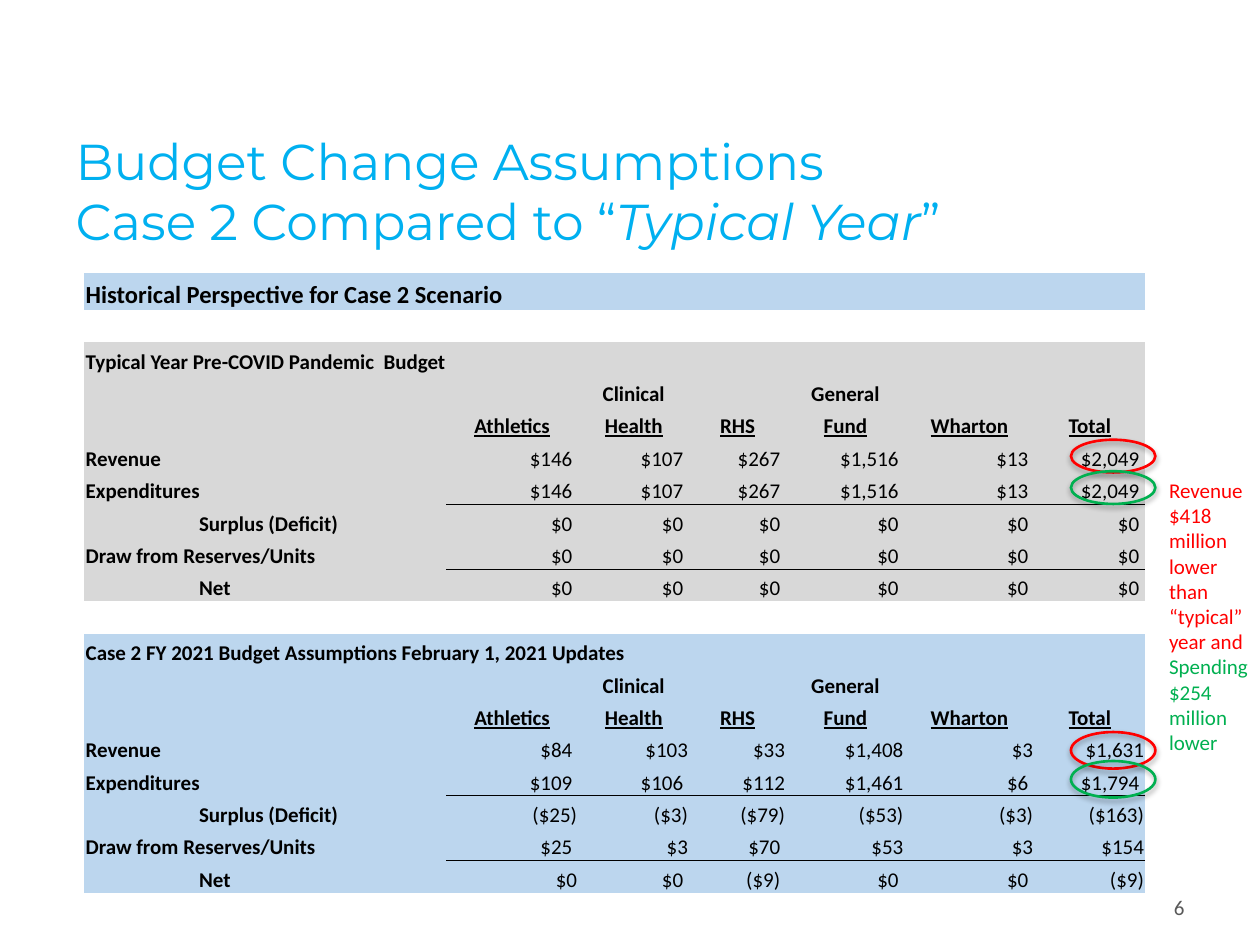
from lxml.etree import SubElement
from pptx import Presentation
from pptx.dml.color import RGBColor
from pptx.enum.shapes import MSO_SHAPE
from pptx.enum.text import MSO_ANCHOR as Anchor, MSO_AUTO_SIZE as AutoSize, PP_ALIGN as Align
from pptx.oxml import parse_xml
from pptx.oxml.ns import nsdecls, qn
from pptx.util import Inches, Pt

presentation = Presentation()
presentation.slide_width = Inches(10)
presentation.slide_height = Inches(7.5)
slide = presentation.slides.add_slide(presentation.slide_layouts[5])
unit = presentation.slide_width // 100
color = RGBColor.from_string
BLUE, GRAY, RED, GREEN, BLACK = "BCD6EE", "D8D8D8", "FF0000", "00B050", "000000"


def grid(*lengths):
    return [round(length * unit) for length in lengths]


def write(paragraph, text, size=12, font="Calibri", ink=BLACK, align=Align.LEFT,
          bold=False, italic=False, underline=False):
    paragraph.alignment = align
    run = paragraph.add_run()
    run.text = text
    run.font.size = Pt(size)
    run.font.name = font
    run.font.color.rgb = color(ink)
    run.font.bold = bold
    run.font.italic = italic
    run.font.underline = underline


title = slide.shapes.title
title.left, title.top, title.width, title.height = grid(5, 9.8, 90, 9.1)
title.text_frame.vertical_anchor = Anchor.TOP
title.text_frame.auto_size = AutoSize.NONE
title.text_frame.word_wrap = True
heading = title.text_frame.paragraphs[0]
title_style = {"size": 28.8, "font": "Montserrat", "ink": "00B0F0"}
write(heading, "Budget Change Assumptions", **title_style)
heading.add_line_break()
write(heading, "Case 2 Compared to “", **title_style)
write(heading, "Typical Year", italic=True, **title_style)
write(heading, "”", **title_style)

number = slide.shapes.add_textbox(*grid(71.7, 70, 23.3, 4)).text_frame
number.word_wrap = True
number.vertical_anchor = Anchor.MIDDLE
write(number.paragraphs[0], "6", ink="595959", align=Align.RIGHT)

column_widths = [9, 9.6, 10.1, 10.5, 8.8, 7.7, 9.4, 10.3, 8.8]
labels = [("Revenue", 0, 2), ("Expenditures", 0, 2), ("Surplus (Deficit)", 1, 2),
          ("Draw from Reserves/Units", 0, 3), ("Net", 1, 1)]
headers = ["Athletics", "Health", "RHS", "Fund", "Wharton", "Total"]
typical_amounts = [["$146 ", "$107 ", "$267 ", "$1,516 ", "$13 ", "$2,049 "]] * 2 + [["$0 "] * 6] * 3
case_amounts = [
    ["$84 ", "$103", "$33", "$1,408", "$3", "$1,631"],
    ["$109 ", "$106 ", "$112", "$1,461", "$6 ", "$1,794 "],
    ["($25)", "($3)", "($79)", "($53)", "($3)", "($163)"],
    ["$25 ", "$3", "$70 ", "$53", "$3", "$154"],
    ["$0", "$0 ", "($9) ", "$0 ", "$0 ", "($9)"],
]
blocks = [
    (2, 5, "Typical Year Pre-COVID Pandemic  Budget", typical_amounts),
    (11, 7, "Case 2 FY 2021 Budget Assumptions February 1, 2021 Updates", case_amounts),
]

frame = slide.shapes.add_table(19, 9, *grid(6.7, 21.7, 84.2, 49.2))
table = frame.table
table.first_row = table.horz_banding = False
table._tbl.tblPr.find(qn("a:tableStyleId")).text = "{2D5ABB26-0587-4C30-8999-92F81FD0307C}"
for column, width in zip(table.columns, grid(*column_widths)):
    column.width = width
first_height, body_height = grid(2.9, (49.2 - 2.9) / 18)
for index, row in enumerate(table.rows):
    row.height = body_height if index else first_height
    fill = BLUE if index == 0 or index >= 11 else GRAY
    for cell in row.cells:
        cell.margin_left = cell.margin_right = cell.margin_top = Inches(0.01)
        cell.margin_bottom = 0
        cell.vertical_anchor = Anchor.BOTTOM
        if index in (1, 10):
            cell.fill.background()
        else:
            cell.fill.solid()
            cell.fill.fore_color.rgb = color(fill)

table.cell(0, 0).merge(table.cell(0, 5))
write(table.cell(0, 0).text_frame.paragraphs[0], "Historical Perspective for Case 2 Scenario",
      size=14, bold=True)
edge_fills = ["<a:noFill/>", f'<a:solidFill><a:srgbClr val="{BLACK}"/></a:solidFill>']
for top, title_span, name, amounts in blocks:
    table.cell(top, 0).merge(table.cell(top, title_span - 1))
    write(table.cell(top, 0).text_frame.paragraphs[0], name, bold=True)
    for column, text in ((4, "Clinical"), (6, "General")):
        write(table.cell(top + 1, column).text_frame.paragraphs[0], text,
              bold=True, align=Align.CENTER)
    for column, text in enumerate(headers, 3):
        write(table.cell(top + 2, column).text_frame.paragraphs[0], text,
              bold=True, underline=True, align=Align.CENTER)
    for index, ((label, start, span), values) in enumerate(zip(labels, amounts)):
        label_cell = table.cell(top + 3 + index, start)
        if span > 1:
            label_cell.merge(table.cell(top + 3 + index, start + span - 1))
        write(label_cell.text_frame.paragraphs[0], label, bold=True)
        for column, text in enumerate(values, 3):
            cell = table.cell(top + 3 + index, column)
            write(cell.text_frame.paragraphs[0], text, align=Align.RIGHT)
            for edge, ruled in (("lnB", index in (1, 3)), ("lnT", index in (2, 4))):
                cell._tc.get_or_add_tcPr().insert(0, parse_xml(
                    f'<a:{edge} {nsdecls("a")} w="{Pt(0.5)}">{edge_fills[ruled]}</a:{edge}>'))

for cell in table.iter_cells():
    paragraph = cell.text_frame.paragraphs[0]
    if not paragraph.runs:
        SubElement(paragraph._p, qn("a:endParaRPr"), sz="1200")

note = slide.shapes.add_textbox(*grid(91.8, 37.4, 9, 23.2)).text_frame
note.word_wrap = True
write(note.paragraphs[0], "Revenue $418 million lower than “typical” year and ", ink=RED)
write(note.paragraphs[0], "Spending $254 million lower", ink=GREEN)

for top, height, ink in [(34.9, 2.6, RED), (58.1, 2.9, RED), (60.4, 2.9, GREEN), (37.4, 2.6, GREEN)]:
    ring = slide.shapes.add_shape(MSO_SHAPE.OVAL, *grid(85, top, 6.7, height))
    ring.fill.background()
    ring.line.color.rgb = color(ink)
    ring.line.width = Pt(1.5)
    ring.shadow.inherit = False
    ring._element.spPr.find(qn("a:effectLst")).append(parse_xml(
        f'<a:outerShdw {nsdecls("a")} blurRad="{Pt(3.1)}" dist="{Pt(1.8)}" dir="5400000" '
        f'rotWithShape="0"><a:srgbClr val="{BLACK}"><a:alpha val="35000"/></a:srgbClr></a:outerShdw>'))

presentation.save("out.pptx")
